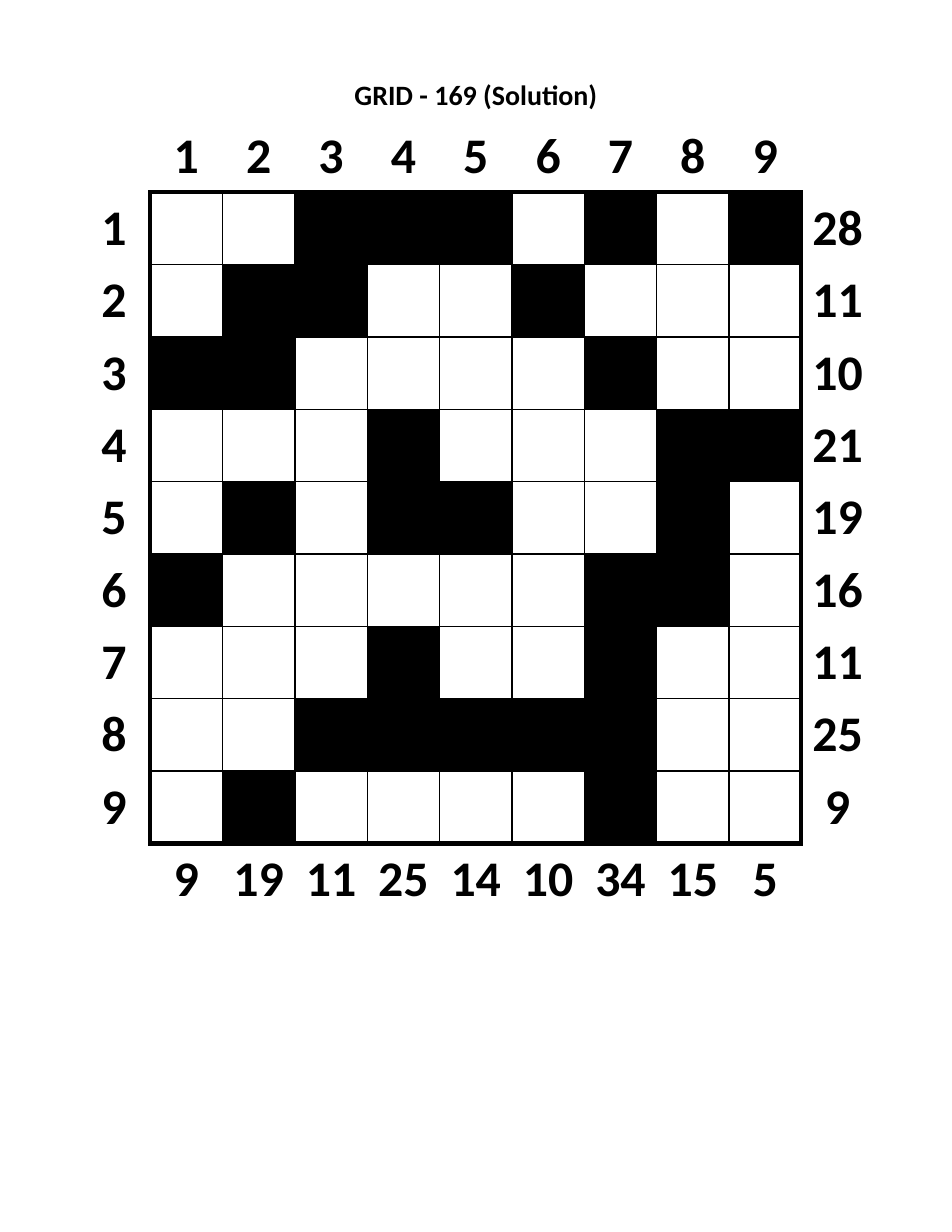
from dataclasses import dataclass

import pptx
import pptx.dml.color
import pptx.enum.text
import pptx.oxml
import pptx.oxml.ns
import pptx.util
from pptx.table import _Cell


@dataclass(frozen=True)
class Theme:
    font: str = "Calibri"
    ink: str = "000000"
    paper: str = "FFFFFF"
    title_size: int = 18
    label_size: int = 32
    thin: int = 1
    thick: int = 3


@dataclass(frozen=True)
class Side:
    tag: str
    row_step: int
    col_step: int


THEME = Theme()
SIDES = (Side("lnL", 0, -1), Side("lnR", 0, 1), Side("lnT", -1, 0), Side("lnB", 1, 0))

# Solution: # is a shaded square
PUZZLE = (
    "..###.#.#",
    ".##..#...",
    "##....#..",
    "...#...##",
    ".#.##..#.",
    "#.....##.",
    "...#..#..",
    "..#####..",
    ".#....#..",
)
N = len(PUZZLE)
LAST = N + 1  # row and column that hold the sums

# Page and grid, in inches
PAGE_W, PAGE_H = 8.5, 11
BOARD = 7.11
CELL = BOARD / (N + 2)
LEFT = (PAGE_W - BOARD) / 2
TITLE_TOP, TITLE_H, BOARD_TOP = 0.69, 0.3, 1.07


def inside(row: int, col: int) -> bool:
    return 1 <= row <= N and 1 <= col <= N


def shaded(row: int, col: int) -> bool:
    return inside(row, col) and PUZZLE[row - 1][col - 1] == "#"


def label(row: int, col: int) -> str:
    """Number of a line at its start, sum of its shaded positions at its end."""
    numbers = range(1, N + 1)
    if row in numbers and col == 0:
        return str(row)
    if col in numbers and row == 0:
        return str(col)
    if row in numbers and col == LAST:
        return str(sum(c for c in numbers if shaded(row, c)))
    if col in numbers and row == LAST:
        return str(sum(r for r in numbers if shaded(r, col)))
    return ""


def write(tf: pptx.text.text.TextFrame, text: str, size: int) -> None:
    tf.text = text
    p = tf.paragraphs[0]
    p.alignment = pptx.enum.text.PP_ALIGN.CENTER
    font = p.runs[0].font
    font.name, font.size, font.bold = THEME.font, pptx.util.Pt(size), True
    font.color.rgb = pptx.dml.color.RGBColor.from_string(THEME.ink)


def add_border(cell: _Cell, tag: str, weight: int) -> None:
    ns = pptx.oxml.ns.nsdecls("a")
    if weight:
        xml = (f'<a:{tag} {ns} w="{pptx.util.Pt(weight)}"><a:solidFill>'
               f'<a:srgbClr val="{THEME.ink}"/></a:solidFill></a:{tag}>')
    else:
        xml = f'<a:{tag} {ns} w="0"><a:noFill/></a:{tag}>'
    cell._tc.get_or_add_tcPr().append(pptx.oxml.parse_xml(xml))


def format_cell(cell: _Cell, row: int, col: int) -> None:
    cell.margin_left = cell.margin_right = cell.margin_top = cell.margin_bottom = 0
    cell.vertical_anchor = pptx.enum.text.MSO_ANCHOR.MIDDLE
    # Thick lines around the puzzle, thin ones within, none outside
    weights = {0: 0, 1: THEME.thick, 2: THEME.thin}
    for side in SIDES:
        touching = inside(row, col) + inside(row + side.row_step, col + side.col_step)
        add_border(cell, side.tag, weights[touching])
    cell.fill.solid()
    cell.fill.fore_color.rgb = pptx.dml.color.RGBColor.from_string(
        THEME.ink if shaded(row, col) else THEME.paper)
    if text := label(row, col):
        write(cell.text_frame, text, THEME.label_size)


def add_title(slide: pptx.slide.Slide, text: str) -> None:
    sp = slide.shapes.title
    sp.left, sp.top, sp.width, sp.height = (
        pptx.util.Inches(v) for v in (LEFT, TITLE_TOP, BOARD, TITLE_H))
    tf = sp.text_frame
    tf.margin_left = tf.margin_right = tf.margin_top = tf.margin_bottom = 0
    tf.word_wrap = True
    tf.auto_size = pptx.enum.text.MSO_AUTO_SIZE.NONE
    tf.vertical_anchor = pptx.enum.text.MSO_ANCHOR.TOP
    write(tf, text, THEME.title_size)


def add_board(slide: pptx.slide.Slide) -> None:
    size = pptx.util.Inches(BOARD)
    table = slide.shapes.add_table(
        N + 2, N + 2, pptx.util.Inches(LEFT), pptx.util.Inches(BOARD_TOP), size, size).table
    table.first_row = table.horz_banding = False
    for i in range(N + 2):
        table.rows[i].height = table.columns[i].width = pptx.util.Inches(CELL)
        for j in range(N + 2):
            format_cell(table.cell(i, j), i, j)


def main() -> None:
    prs = pptx.Presentation()
    prs.slide_width = pptx.util.Inches(PAGE_W)
    prs.slide_height = pptx.util.Inches(PAGE_H)
    slide = prs.slides.add_slide(prs.slide_layouts.get_by_name("Title Only"))
    add_title(slide, "GRID - 169 (Solution)")
    add_board(slide)
    prs.save("out.pptx")


if __name__ == "__main__":
    main()
